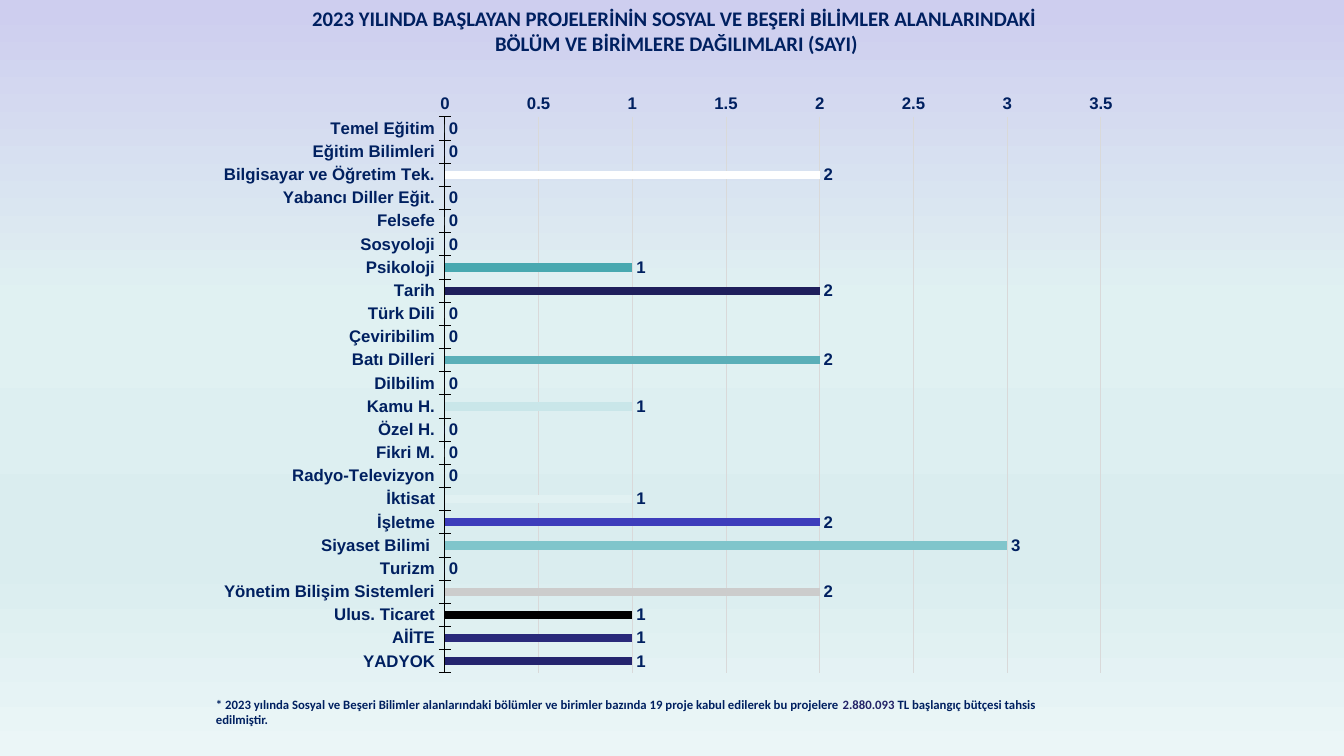
from dataclasses import dataclass

from lxml.etree import SubElement
from pptx import Presentation
from pptx.chart.axis import CategoryAxis, ValueAxis
from pptx.chart.chart import Chart
from pptx.chart.data import CategoryChartData
from pptx.dml.color import RGBColor
from pptx.enum.chart import XL_CHART_TYPE, XL_LABEL_POSITION, XL_TICK_MARK
from pptx.enum.text import MSO_ANCHOR, MSO_AUTO_SIZE, PP_ALIGN
from pptx.oxml.ns import qn
from pptx.shapes.autoshape import Shape
from pptx.slide import Slide
from pptx.text.text import Font
from pptx.util import Emu, Pt

SLIDE_WIDTH, SLIDE_HEIGHT = 1344, 756
EMU_PER_PX = 12192000 / SLIDE_WIDTH
NAVY = "002060"
AMOUNT_COLOR = "222267"


@dataclass(frozen=True)
class Area:
    left: int
    top: int
    width: int
    height: int


@dataclass(frozen=True)
class Span:
    text: str
    color: str = NAVY


@dataclass(frozen=True)
class Department:
    name: str
    projects: int
    color: str


@dataclass(frozen=True)
class Stop:
    percent: int
    color: str


TITLE_AREA = Area(221, 1, 911, 60)
NOTE_AREA = Area(206, 692, 885, 40)
CHART_AREA = Area(206, 84, 926, 602)
PLOT_AREA = Area(239, 33, 656, 556)

BACKGROUND = [
    Stop(1, "CECEEF"),
    Stop(40, "E0F1F2"),
    Stop(74, "DAEDEF"),
    Stop(100, "EBF6F7"),
]

TITLE = [
    [Span("2023 YILINDA BAŞLAYAN PROJELERİNİN SOSYAL VE BEŞERİ BİLİMLER ALANLARINDAKİ ")],
    [Span("BÖLÜM VE BİRİMLERE DAĞILIMLARI (SAYI)")],
]

NOTE = [[
    Span("* 2023 yılında Sosyal ve Beşeri Bilimler alanlarındaki bölümler ve birimler "
         "bazında 19 proje kabul edilerek bu projelere "),
    Span("2.880.093", AMOUNT_COLOR),
    Span(" TL başlangıç bütçesi tahsis edilmiştir."),
]]

DEPARTMENTS = [
    Department("Temel Eğitim", 0, "BBE0E3"),
    Department("Eğitim Bilimleri", 0, "333399"),
    Department("Bilgisayar ve Öğretim Tek.", 2, "FFFFFF"),
    Department("Yabancı Diller Eğit.", 0, "000000"),
    Department("Felsefe", 0, "DAEDEF"),
    Department("Sosyoloji", 0, "2D2D8A"),
    Department("Psikoloji", 1, "48A8B0"),
    Department("Tarih", 2, "1F1F5C"),
    Department("Türk Dili", 0, "999999"),
    Department("Çeviribilim", 0, "000000"),
    Department("Batı Dilleri", 2, "5AAFB8"),
    Department("Dilbilim", 0, "1B1B53"),
    Department("Kamu H.", 1, "C9E6E9"),
    Department("Özel H.", 0, "4747C2"),
    Department("Fikri M.", 0, "FFFFFF"),
    Department("Radyo-Televizyon", 0, "333333"),
    Department("İktisat", 1, "E1F1F2"),
    Department("İşletme", 2, "3D3DBB"),
    Department("Siyaset Bilimi ", 3, "80C5CB"),
    Department("Turizm", 0, "29297A"),
    Department("Yönetim Bilişim Sistemleri", 2, "CCCCCC"),
    Department("Ulus. Ticaret", 1, "000000"),
    Department("AİİTE", 1, "29297A"),
    Department("YADYOK", 1, "24246E"),
]


def px(length: int) -> Emu:
    return Emu(round(length * EMU_PER_PX))


def rgb(color: str) -> RGBColor:
    return RGBColor.from_string(color)


def frame(area: Area) -> tuple[Emu, Emu, Emu, Emu]:
    return px(area.left), px(area.top), px(area.width), px(area.height)


def style_font(font: Font, name: str, size: float, color: str = NAVY) -> None:
    font.name = name
    font.size = Pt(size)
    font.bold = True
    font.color.rgb = rgb(color)


def paint_background(page: Slide, stops: list[Stop]) -> None:
    fill = page.background.fill
    fill.gradient()
    fill.gradient_angle = 270
    stop_list = page.background._cSld.find(".//" + qn("a:gsLst"))
    for old_stop in list(stop_list):
        stop_list.remove(old_stop)
    for stop in stops:
        node = SubElement(stop_list, qn("a:gs"), pos=str(stop.percent * 1000))
        SubElement(node, qn("a:srgbClr"), val=stop.color)


def write_text(box: Shape, paragraphs: list[list[Span]], size: float, align: PP_ALIGN) -> None:
    text = box.text_frame
    text.word_wrap = True
    text.auto_size = MSO_AUTO_SIZE.NONE
    text.vertical_anchor = MSO_ANCHOR.TOP
    for index, spans in enumerate(paragraphs):
        para = text.paragraphs[0] if index == 0 else text.add_paragraph()
        para.alignment = align
        for span in spans:
            run = para.add_run()
            run.text = span.text
            style_font(run.font, "Calibri", size, span.color)


def add_title(page: Slide) -> None:
    title = page.shapes.title
    title.left, title.top, title.width, title.height = frame(TITLE_AREA)
    write_text(title, TITLE, 14.8, PP_ALIGN.CENTER)


def add_note(page: Slide) -> None:
    write_text(page.shapes.add_textbox(*frame(NOTE_AREA)), NOTE, 9.1, PP_ALIGN.LEFT)


def place_plot(chart: Chart) -> None:
    plot_area = chart._chartSpace.chart.plotArea
    layout = plot_area.find(qn("c:layout"))
    if layout is None:
        layout = SubElement(plot_area, qn("c:layout"))
        plot_area.insert(0, layout)
    manual = SubElement(layout, qn("c:manualLayout"))
    settings = {
        "layoutTarget": "inner",
        "xMode": "edge",
        "yMode": "edge",
        "x": PLOT_AREA.left / CHART_AREA.width,
        "y": PLOT_AREA.top / CHART_AREA.height,
        "w": PLOT_AREA.width / CHART_AREA.width,
        "h": PLOT_AREA.height / CHART_AREA.height,
    }
    for tag, value in settings.items():
        SubElement(manual, qn(f"c:{tag}"), val=str(value))


def style_department_axis(axis: CategoryAxis) -> None:
    axis.reverse_order = True
    axis.major_tick_mark = XL_TICK_MARK.CROSS
    axis.format.line.color.rgb = rgb("000000")
    axis.format.line.width = Pt(0.75)
    style_font(axis.tick_labels.font, "Arial", 12)


def style_project_axis(axis: ValueAxis) -> None:
    axis.minimum_scale, axis.maximum_scale, axis.major_unit = 0, 3.5, 0.5
    axis.major_tick_mark = XL_TICK_MARK.NONE
    axis.format.line.fill.background()
    axis.has_major_gridlines = True
    axis.major_gridlines.format.line.color.rgb = rgb("D9D9D9")
    axis.major_gridlines.format.line.width = Pt(0.75)
    style_font(axis.tick_labels.font, "Arial", 12)


def add_project_chart(page: Slide) -> None:
    data = CategoryChartData()
    data.categories = [department.name for department in DEPARTMENTS]
    data.add_series("Series 1", [department.projects for department in DEPARTMENTS])
    chart = page.shapes.add_chart(XL_CHART_TYPE.BAR_CLUSTERED, *frame(CHART_AREA), data).chart
    chart.has_legend = False
    chart.has_title = False
    style_font(chart.font, "Arial", 10)
    place_plot(chart)
    style_department_axis(chart.category_axis)
    style_project_axis(chart.value_axis)
    plot = chart.plots[0]
    plot.gap_width = 182
    plot.vary_by_categories = False
    series = plot.series[0]
    for index, department in enumerate(DEPARTMENTS):
        fill = series.points[index].format.fill
        fill.solid()
        fill.fore_color.rgb = rgb(department.color)
    labels = series.data_labels
    labels.show_value = True
    labels.position = XL_LABEL_POSITION.OUTSIDE_END
    style_font(labels.font, "Arial", 12)


def main() -> None:
    deck = Presentation()
    deck.slide_width, deck.slide_height = px(SLIDE_WIDTH), px(SLIDE_HEIGHT)
    page = deck.slides.add_slide(deck.slide_layouts.get_by_name("Title Only"))
    paint_background(page, BACKGROUND)
    add_title(page)
    add_note(page)
    add_project_chart(page)
    deck.save("out.pptx")


if __name__ == "__main__":
    main()
